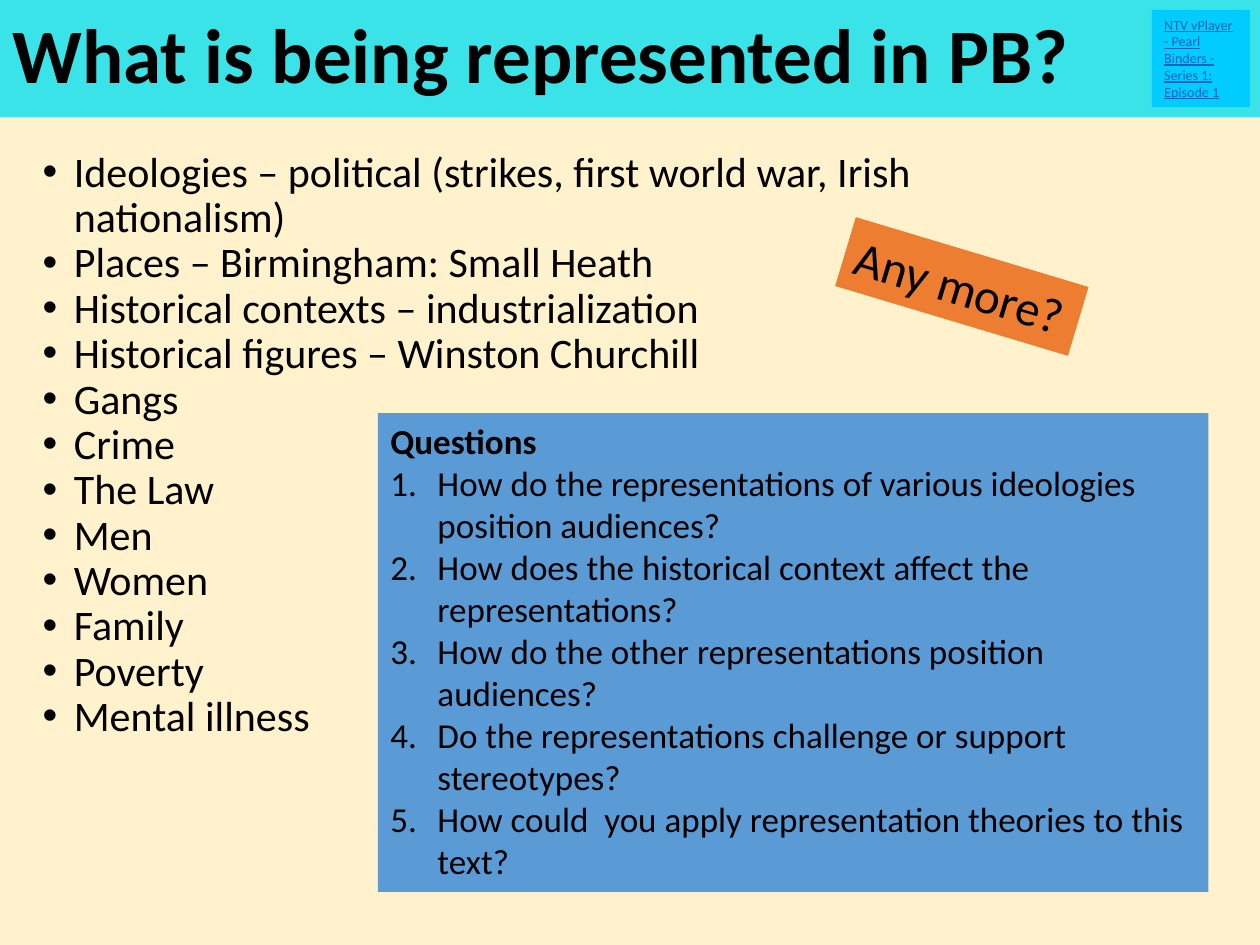
"""Build the slide on what is being represented in a television drama."""
from dataclasses import dataclass

from lxml import etree
from pptx import Presentation
from pptx.dml.color import RGBColor
from pptx.enum.shapes import MSO_SHAPE
from pptx.enum.text import MSO_ANCHOR, MSO_AUTO_SIZE, PP_ALIGN
from pptx.oxml.ns import qn
from pptx.util import Cm, Pt

RECTANGLE = MSO_SHAPE.RECTANGLE
LEFT = PP_ALIGN.LEFT
TOP, MIDDLE = MSO_ANCHOR.TOP, MSO_ANCHOR.MIDDLE
NO_AUTOFIT = MSO_AUTO_SIZE.NONE
FONT = "Calibri"
BLACK = "000000"
TITLE_ONLY = 5


@dataclass
class Line:
    text: str
    bold: bool = False
    marker: str = ""
    indent: float = 0
    spacing: float = 1.0


@dataclass
class Box:
    left: float
    top: float
    width: float
    height: float
    lines: list[Line]
    size: float
    fill: str = ""
    color: str = BLACK
    underline: bool = False
    rotation: float = 0
    wrap: bool = True
    anchor: MSO_ANCHOR = TOP


TOPICS = [
    "Ideologies – political (strikes, first world war, Irish nationalism)",
    "Places – Birmingham: Small Heath",
    "Historical contexts – industrialization",
    "Historical figures – Winston Churchill",
    "Gangs",
    "Crime",
    "The Law",
    "Men",
    "Women",
    "Family",
    "Poverty",
    "Mental illness",
]
QUESTIONS = [
    "How do the representations of various ideologies position audiences?",
    "How does the historical context affect the representations?",
    "How do the other representations position audiences?",
    "Do the representations challenge or support stereotypes?",
    "How could  you apply representation theories to this text?",
]

TITLE = Box(0, 0, 25.4, 2.36,
            [Line("What is being represented in PB?", bold=True, spacing=0.9)],
            size=44, fill="39E3E7", anchor=MIDDLE)
TOPIC_LIST = Box(0.61, 2.92, 18.77, 15.37,
                 [Line(topic, marker="bullet", indent=0.63, spacing=0.9) for topic in TOPICS],
                 size=24)
EPISODE = Box(23.22, 0.2, 1.98, 1.96,
              [Line("NTV vPlayer - Pearl Binders - Series 1: Episode 1")],
              size=8, fill="00CCFF", color="0563C1", underline=True)
PROMPT = Box(16.94, 5.05, 4.9, 1.45, [Line("Any more?")],
             size=28, fill="ED7D31", rotation=16.7, wrap=False)
QUESTION_PANEL = Box(7.62, 8.33, 16.74, 9.65,
                     [Line("Questions", bold=True)]
                     + [Line(question, marker="number", indent=0.95) for question in QUESTIONS],
                     size=20, fill="5B9BD5")


def rgb(value: str) -> RGBColor:
    """Return the colour of a hex string."""
    return RGBColor.from_string(value)


def add_marker(paragraph, line: Line) -> None:
    """Give a paragraph a hanging bullet or number."""
    properties = paragraph._p.get_or_add_pPr()
    properties.set("marL", str(Cm(line.indent)))
    properties.set("indent", str(-Cm(line.indent)))
    if line.marker == "number":
        etree.SubElement(properties, qn("a:buFont"), typeface="+mj-lt")
        etree.SubElement(properties, qn("a:buAutoNum"), type="arabicPeriod")
    else:
        etree.SubElement(properties, qn("a:buFont"), typeface="Arial")
        etree.SubElement(properties, qn("a:buChar"), char="•")


def write_lines(text_frame, box: Box) -> None:
    """Write the lines of a box, one paragraph each."""
    for index, line in enumerate(box.lines):
        paragraph = text_frame.add_paragraph() if index else text_frame.paragraphs[0]
        paragraph.alignment = LEFT
        paragraph.line_spacing = line.spacing
        paragraph.space_before = paragraph.space_after = Pt(0)
        if line.marker:
            add_marker(paragraph, line)
        run = paragraph.add_run()
        run.text = line.text
        font = run.font
        font.name, font.size = FONT, Pt(box.size)
        font.bold, font.underline = line.bold, box.underline
        font.color.rgb = rgb(box.color)


def format_box(shape, box: Box) -> None:
    """Place a shape and give it its fill and text."""
    shape.left, shape.top = Cm(box.left), Cm(box.top)
    shape.width, shape.height = Cm(box.width), Cm(box.height)
    shape.rotation = box.rotation
    if box.fill:
        shape.fill.solid()
        shape.fill.fore_color.rgb = rgb(box.fill)
    text_frame = shape.text_frame
    text_frame.auto_size = NO_AUTOFIT
    text_frame.word_wrap = box.wrap
    text_frame.vertical_anchor = box.anchor
    write_lines(text_frame, box)


def add_box(slide, box: Box) -> None:
    """Add a filled rectangle, or a text box when there is no fill."""
    place = Cm(box.left), Cm(box.top), Cm(box.width), Cm(box.height)
    if box.fill:
        shape = slide.shapes.add_shape(RECTANGLE, *place)
        shape.shadow.inherit = False
        shape.line.fill.background()
    else:
        shape = slide.shapes.add_textbox(*place)
    format_box(shape, box)


def main() -> None:
    """Build and save the presentation."""
    presentation = Presentation()
    presentation.slide_width, presentation.slide_height = Cm(25.4), Cm(19.05)
    slide = presentation.slides.add_slide(presentation.slide_layouts[TITLE_ONLY])
    slide.background.fill.solid()
    slide.background.fill.fore_color.rgb = rgb("FFF2CC")
    format_box(slide.shapes.title, TITLE)
    for box in (TOPIC_LIST, EPISODE, PROMPT, QUESTION_PANEL):
        add_box(slide, box)
    presentation.save("out.pptx")


if __name__ == "__main__":
    main()
